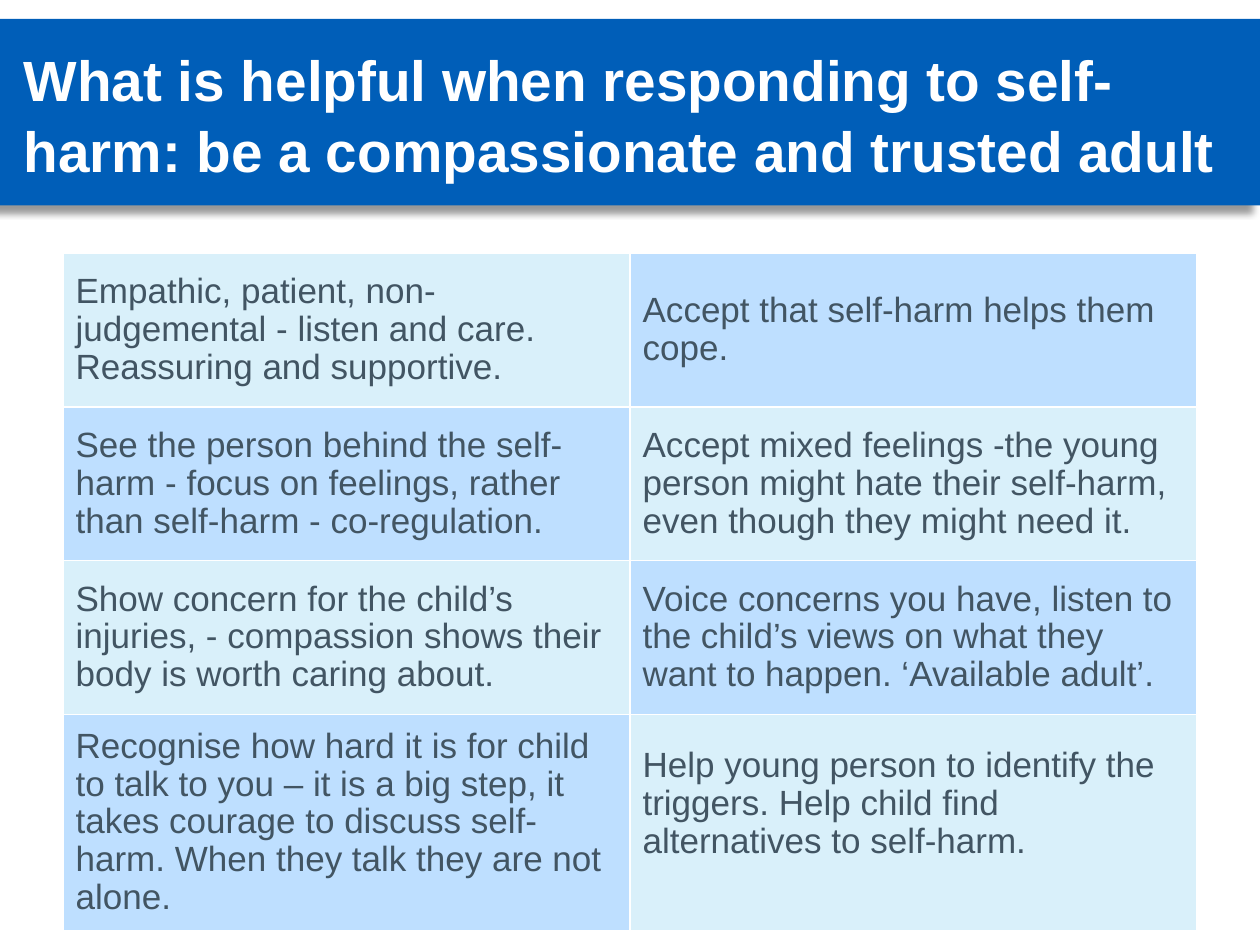
from pptx import Presentation
from pptx import util as u
from pptx.dml.color import RGBColor
from pptx.enum import shapes, text
from pptx.oxml import parse_xml
from pptx.oxml.ns import nsdecls

FONT = "Arial"
BLUE, WHITE, GREY = "005EB8", "FFFFFF", "425563"
TINTS = "D9F0FA", "BEDFFF"

TITLE = ("What is helpful when responding to self-harm: "
         "be a compassionate and trusted adult")
ADVICE = [
    ("Empathic, patient, non-judgemental - listen and care.\n"
     "Reassuring and supportive.",
     "Accept that self-harm helps them cope."),
    ("See the person behind the self-harm - focus on feelings, "
     "rather than self-harm - co-regulation.",
     "Accept mixed feelings -the young person might hate their "
     "self-harm, even though they might need it."),
    ("Show concern for the child’s injuries, - compassion shows "
     "their body is worth caring about.",
     "Voice concerns you have, listen to the child’s views on what "
     "they want to happen. ‘Available adult’."),
    ("Recognise how hard it is for child to talk to you – it is a big "
     "step, it takes courage to discuss self-harm. When they talk they "
     "are not alone.",
     "Help young person to identify the triggers. Help child find "
     "alternatives to self-harm."),
]


def paint(fill, color):
    fill.solid()
    fill.fore_color.rgb = RGBColor.from_string(color)


def style(frame, size, color, bold, pitch):
    for para in frame.paragraphs:
        para.line_spacing = pitch
        font = para.font
        font.name, font.size, font.bold = FONT, u.Pt(size), bold
        font.color.rgb = RGBColor.from_string(color)


def add_shade(shape):
    """Soft shadow falling down and to the left."""
    shape._element.spPr.append(parse_xml(
        f'<a:effectLst {nsdecls("a")}>'
        f'<a:outerShdw blurRad="{u.Pt(4)}" dist="{u.Pt(6)}" dir="8100000" '
        'algn="tr" rotWithShape="0"><a:srgbClr val="000000">'
        '<a:alpha val="40000"/></a:srgbClr></a:outerShdw></a:effectLst>'))


def add_banner(slide, left, top, width, height):
    # Blue band
    band = slide.shapes.add_shape(shapes.MSO_SHAPE.RECTANGLE,
                                  left, top, width, height)
    paint(band.fill, BLUE)
    band.line.fill.background()
    add_shade(band)
    # Title
    box = slide.shapes.add_textbox(left + u.Inches(0.09), top + u.Inches(0.12),
                                   width - u.Inches(0.21),
                                   height - u.Inches(0.23))
    frame = box.text_frame
    frame.word_wrap = True
    frame.vertical_anchor = text.MSO_ANCHOR.MIDDLE
    frame.text = TITLE
    style(frame, 32.4, WHITE, True, 1.04)


def add_advice(slide, left, top, width, height):
    table = slide.shapes.add_table(len(ADVICE), 2, left, top,
                                   width, height).table
    table.first_row = table.horz_banding = False
    # Checkerboard of tinted cells
    for r, row in enumerate(ADVICE):
        for c, words in enumerate(row):
            cell = table.cell(r, c)
            cell.text = words
            cell.vertical_anchor = text.MSO_ANCHOR.MIDDLE
            paint(cell.fill, TINTS[(r + c) % 2])
            style(cell.text_frame, 20, GREY, False, 0.97)
    # The last text sits above the middle of its cell
    cell.margin_bottom = u.Inches(0.34)


def main():
    deck = Presentation()
    deck.slide_width, deck.slide_height = u.Inches(10), u.Inches(7.5)
    slide = deck.slides.add_slide(deck.slide_layouts[6])
    add_banner(slide, 0, u.Inches(0.15), u.Inches(10), u.Inches(1.48))
    add_advice(slide, u.Inches(0.5), u.Inches(2.01),
               u.Inches(9), u.Inches(4.88))
    deck.save("out.pptx")


if __name__ == "__main__":
    main()
